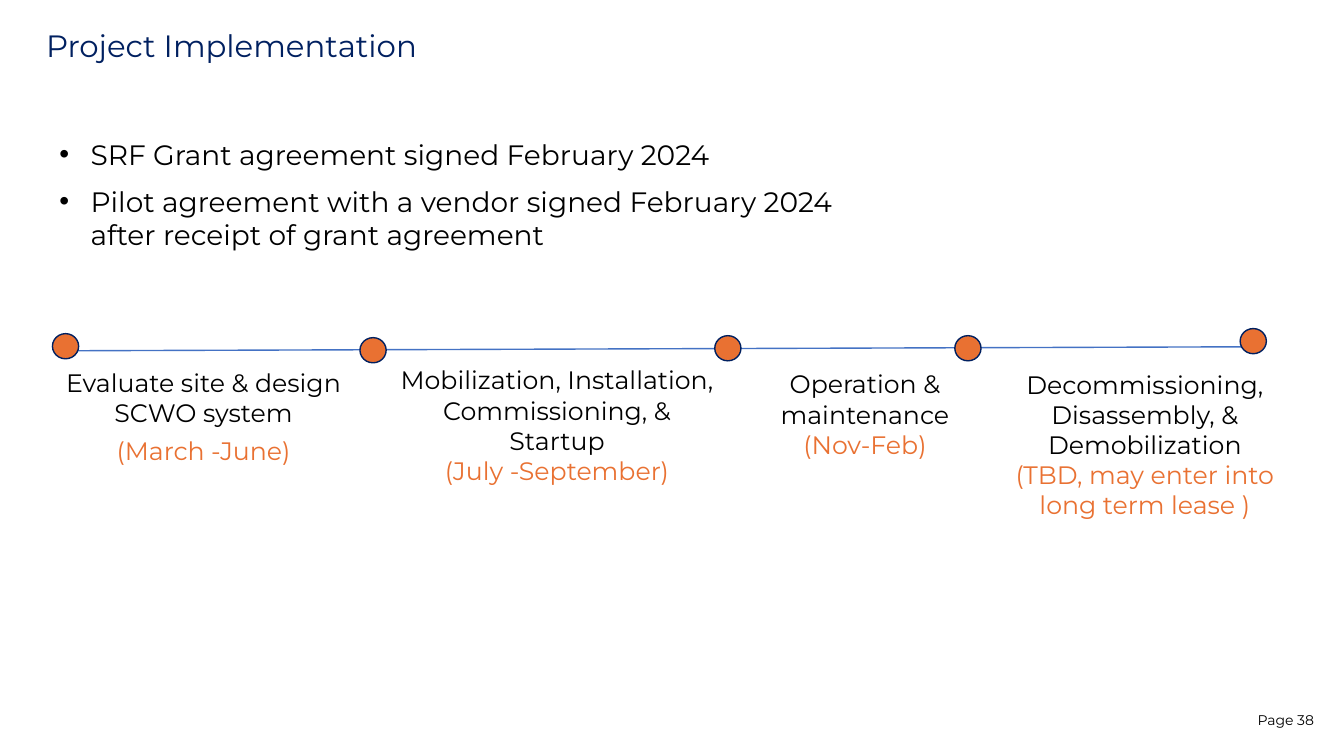
from lxml import etree
from pptx import Presentation
from pptx import util as u
from pptx.dml.color import RGBColor
from pptx.enum import shapes, text
from pptx.oxml.ns import qn

NAVY, ORANGE, BLUE, BLACK = "002060", "E97132", "4472C4", "000000"
LEFT, MID, RIGHT = text.PP_ALIGN.LEFT, text.PP_ALIGN.CENTER, text.PP_ALIGN.RIGHT


def rgb(code):
    return RGBColor.from_string(code)


class Deck:
    face = "Montserrat"

    def __init__(self):
        self.prs = Presentation()
        self.prs.slide_width = u.Inches(13.33)
        self.prs.slide_height = u.Inches(7.5)
        self.slide = self.prs.slides.add_slide(self.prs.slide_layouts[6])

    def x(self, share):
        return round(self.prs.slide_width * share / 100)

    def y(self, share):
        return round(self.prs.slide_height * share / 100)

    def area(self, left, top, width, height):
        return self.x(left), self.y(top), self.x(width), self.y(height)

    def label(self, area, lines, size, align=LEFT, gap=0, dense=None, bullet=False):
        frame = self.slide.shapes.add_textbox(*self.area(*area)).text_frame
        frame.word_wrap = True
        for i, (words, color) in enumerate(lines):
            para = frame.paragraphs[0] if i == 0 else frame.add_paragraph()
            para.text = words
            para.alignment = align
            if i:
                para.space_before = u.Pt(gap)
            if dense:
                para.line_spacing = dense
            if bullet:
                self.bullet(para)
            font = para.font
            font.name, font.size = self.face, u.Pt(size)
            font.color.rgb = rgb(color)

    def bullet(self, para):
        props = para._p.get_or_add_pPr()
        props.set("marL", str(u.Inches(0.31)))
        props.set("indent", str(u.Inches(-0.31)))
        etree.SubElement(props, qn("a:buFont")).set("typeface", "Arial")
        etree.SubElement(props, qn("a:buChar")).set("char", "•")

    def line(self, start, end, color):
        rule = self.slide.shapes.add_connector(
            shapes.MSO_CONNECTOR.STRAIGHT,
            self.x(start[0]), self.y(start[1]), self.x(end[0]), self.y(end[1]))
        rule.line.color.rgb = rgb(color)
        rule.line.width = u.Pt(1)
        etree.SubElement(rule._element.spPr, qn("a:effectLst"))

    def dot(self, x, y, width=1.95, height=3.33):
        area = self.area(x - width / 2, y - height / 2, width, height)
        disc = self.slide.shapes.add_shape(shapes.MSO_SHAPE.OVAL, *area)
        disc.shadow.inherit = False
        disc.fill.solid()
        disc.fill.fore_color.rgb = rgb(ORANGE)
        disc.line.color.rgb = rgb(NAVY)
        disc.line.width = u.Pt(1)


def main():
    deck = Deck()
    deck.label((2.7, 3.47, 93.55, 6.27), [("Project Implementation", NAVY)], 22, dense=0.9)
    deck.label((86.8, 93.47, 11.7, 6.4), [("Page 38", BLACK)], 10, RIGHT)

    points = ["SRF Grant agreement signed February 2024",
              "Pilot agreement with a vendor signed February 2024 "
              "after receipt of grant agreement"]
    deck.label((3.68, 17.47, 60.54, 16.7), [(point, BLACK) for point in points],
               20, gap=9.75, bullet=True)

    deck.line((4.88, 46.4), (93.25, 45.87), BLUE)
    dots = [(4.88, 45.8), (27.76, 46.33), (54.16, 46.07), (72.02, 46.07), (93.25, 45.13)]
    for x, y in dots:
        deck.dot(x, y)

    steps = [
        ((2.4, 47.87, 25.5, 14.5), 6, "Evaluate site & design SCWO system", "(March -June)"),
        ((28.73, 47.6, 25.43, 17.5), 0,
         "Mobilization, Installation, Commissioning, & Startup", "(July -September)"),
        ((56.71, 48.13, 15.3, 13.5), 0, "Operation & maintenance", "(Nov-Feb)"),
        ((73.07, 48.13, 24.23, 21.6), 0, "Decommissioning, Disassembly, & Demobilization",
         "(TBD, may enter into long term lease )"),
    ]
    for area, gap, task, dates in steps:
        deck.label(area, [(task, BLACK), (dates, ORANGE)], 18, MID, gap)

    deck.prs.save("out.pptx")


if __name__ == "__main__":
    main()
